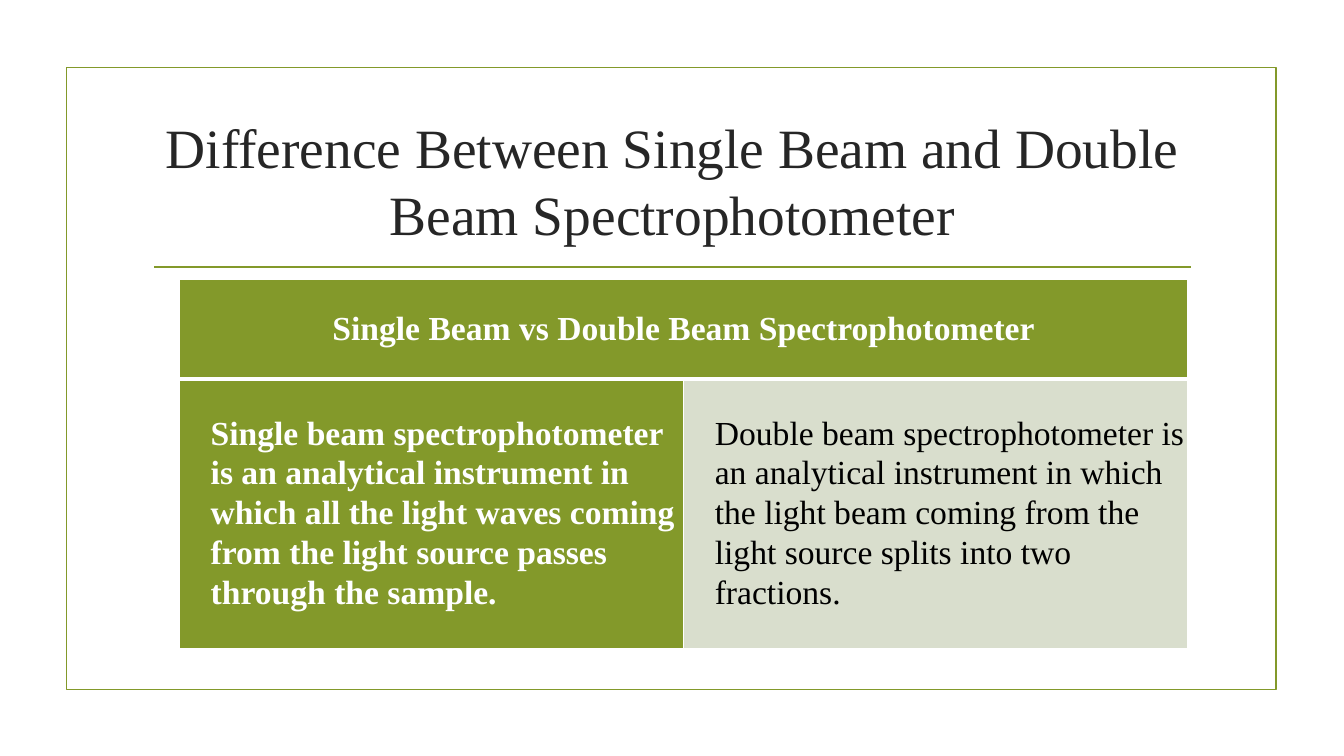
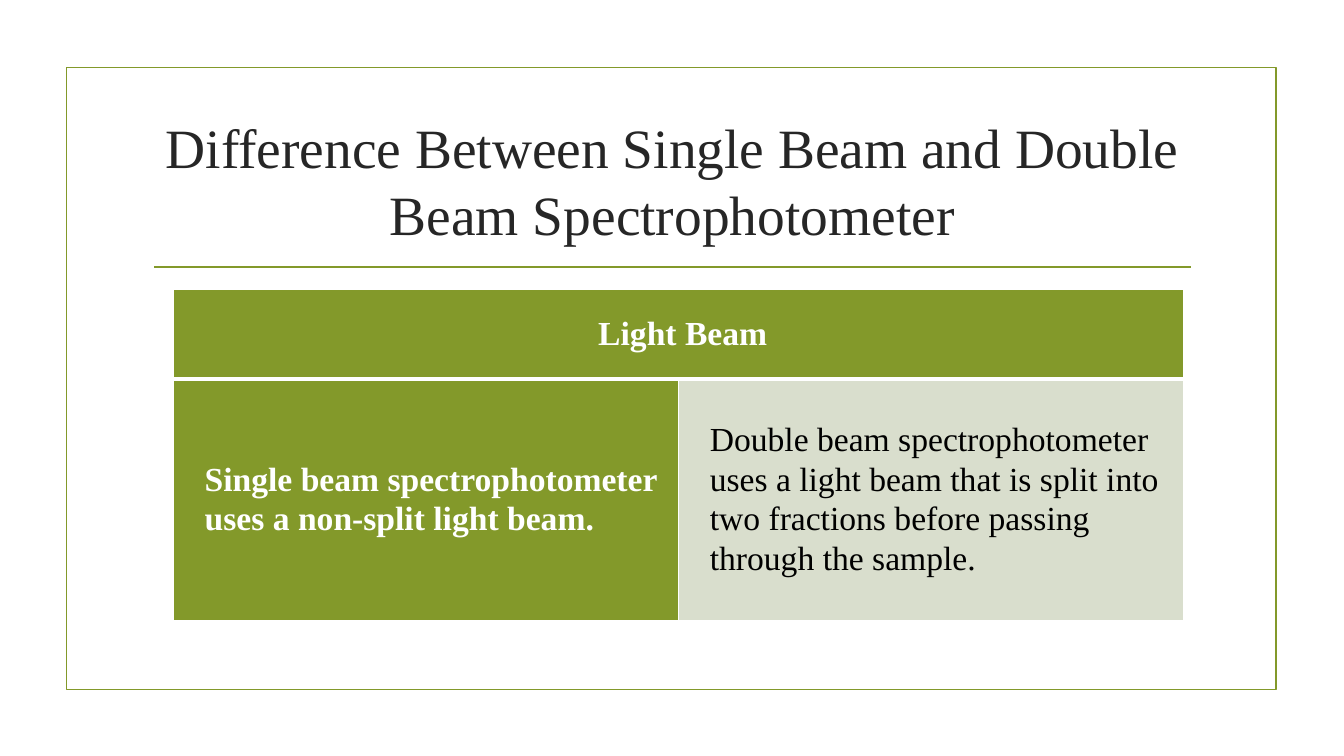
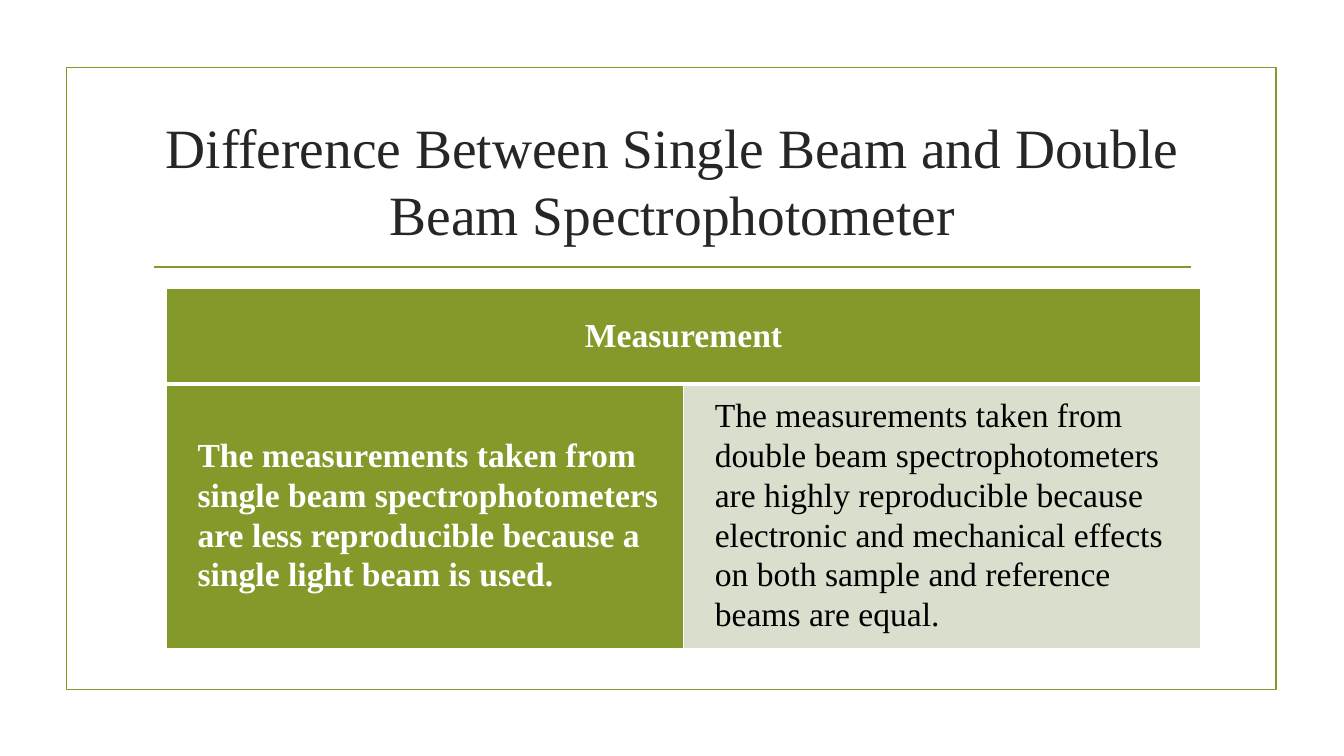
from lxml import etree
from pptx import Presentation
from pptx.dml.color import RGBColor
from pptx.enum.shapes import MSO_CONNECTOR, MSO_SHAPE
from pptx.enum.text import MSO_ANCHOR, PP_ALIGN
from pptx.oxml.ns import qn
from pptx.util import Inches, Pt

RECTANGLE = MSO_SHAPE.RECTANGLE
STRAIGHT = MSO_CONNECTOR.STRAIGHT
MIDDLE = MSO_ANCHOR.MIDDLE
CENTER = PP_ALIGN.CENTER
LEFT = PP_ALIGN.LEFT

COLORS = {
    "green": "83992A",
    "pale": "D9DECD",
    "white": "FFFFFF",
    "black": "000000",
    "title": "262626",
}
FONT = "Times New Roman"
TITLE = "Difference Between Single Beam and Double Beam Spectrophotometer"
COMPARISONS = [
    {
        "box": (1.78, 2.77, 10, 3.66),
        "header_height": 0.99,
        "header": "Single Beam vs Double Beam Spectrophotometer",
        "header_space": 0,
        "single": "Single beam spectrophotometer is an analytical instrument in which "
                  "all the light waves coming from the light source passes through the sample.",
        "double": "Double beam spectrophotometer is an analytical instrument in which "
                  "the light beam coming from the light source splits into two fractions.",
    },
    {
        "box": (1.72, 2.87, 10.02, 3.29),
        "header_height": 0.89,
        "header": " Light Beam",
        "header_space": 8,
        "single": "Single beam spectrophotometer uses a non-split light beam.",
        "double": "Double beam spectrophotometer uses a light beam that is split into "
                  "two fractions before passing through the sample.",
    },
    {
        "box": (1.65, 2.86, 10.26, 3.57),
        "header_height": 0.95,
        "header": "Measurement",
        "header_space": 8,
        "single": "The measurements taken from single beam spectrophotometers are less "
                  "reproducible because a single light beam is used.",
        "double": "The measurements taken from double beam spectrophotometers are highly "
                  "reproducible because electronic and mechanical effects on both sample "
                  "and reference beams are equal.",
    },
]


def color(name):
    return RGBColor.from_string(COLORS[name])


def style_text(para, size, color_name, bold=False):
    for span in para.runs:
        span.font.name = FONT
        span.font.size = Pt(size)
        span.font.bold = bold
        span.font.color.rgb = color(color_name)


def add_frame(page, left, top, width, height):
    frame = page.shapes.add_shape(
        RECTANGLE, Inches(left), Inches(top), Inches(width), Inches(height))
    frame.shadow.inherit = False
    frame.fill.background()
    frame.line.color.rgb = color("green")
    frame.line.width = Pt(1.25)


def add_rule(page, left, top, width):
    rule = page.shapes.add_connector(
        STRAIGHT, Inches(left), Inches(top), Inches(left + width), Inches(top))
    rule.line.color.rgb = color("green")
    rule.line.width = Pt(1.25)
    etree.SubElement(rule._element.spPr, qn("a:effectLst"))


def add_title(page, left, top, width, height):
    box = page.shapes.add_textbox(
        Inches(left), Inches(top), Inches(width), Inches(height))
    frame = box.text_frame
    frame.word_wrap = True
    frame.vertical_anchor = MIDDLE
    frame.text = TITLE
    para = frame.paragraphs[0]
    para.alignment = CENTER
    style_text(para, 39.6, "title")


def set_borders(cell, bottom):
    properties = cell._tc.get_or_add_tcPr()
    widths = {"a:lnL": 1, "a:lnR": 1, "a:lnT": 1, "a:lnB": bottom}
    for position, (side, width) in enumerate(widths.items()):
        border = etree.Element(qn(side), w=str(Pt(width)))
        fill = etree.SubElement(border, qn("a:solidFill"))
        etree.SubElement(fill, qn("a:srgbClr"), val=COLORS["white"])
        properties.insert(position, border)


def fill_cell(cell, text, fill, text_color, bold=True, align=LEFT,
              indent=0.31, space=8, bottom=1):
    cell.fill.solid()
    cell.fill.fore_color.rgb = color(fill)
    set_borders(cell, bottom)
    cell.vertical_anchor = MIDDLE
    cell.margin_left = Inches(indent)
    cell.margin_top = cell.margin_right = Inches(0.01)
    cell.margin_bottom = Inches(0.04)
    cell.text_frame.text = text
    para = cell.text_frame.paragraphs[0]
    para.alignment = align
    para.line_spacing = 1.07
    para.space_after = Pt(space)
    style_text(para, 24, text_color, bold)


def add_comparison(page, comparison):
    left, top, width, height = comparison["box"]
    header_height = comparison["header_height"]
    table = page.shapes.add_table(
        2, 2, Inches(left), Inches(top), Inches(width), Inches(height)).table
    for column in table.columns:
        column.width = Inches(width / 2)
    table.rows[0].height = Inches(header_height)
    table.rows[1].height = Inches(height - header_height)
    header = table.cell(0, 0)
    header.merge(table.cell(0, 1))
    fill_cell(header, comparison["header"], "green", "white", align=CENTER,
              indent=0.01, space=comparison["header_space"], bottom=3)
    set_borders(table.cell(0, 1), 3)
    fill_cell(table.cell(1, 0), comparison["single"], "green", "white")
    fill_cell(table.cell(1, 1), comparison["double"], "pale", "black", bold=False)


def add_page(deck, comparison):
    page = deck.slides.add_slide(deck.slide_layouts[6])
    page.background.fill.solid()
    page.background.fill.fore_color.rgb = color("white")
    add_frame(page, 0.66, 0.67, 12, 6.17)
    add_rule(page, 1.53, 2.65, 10.28)
    add_title(page, 1.42, 1.07, 10.5, 1.43)
    add_comparison(page, comparison)


def main():
    deck = Presentation()
    deck.slide_width = Inches(13.33)
    deck.slide_height = Inches(7.5)
    for comparison in COMPARISONS:
        add_page(deck, comparison)
    deck.save("out.pptx")


if __name__ == "__main__":
    main()
